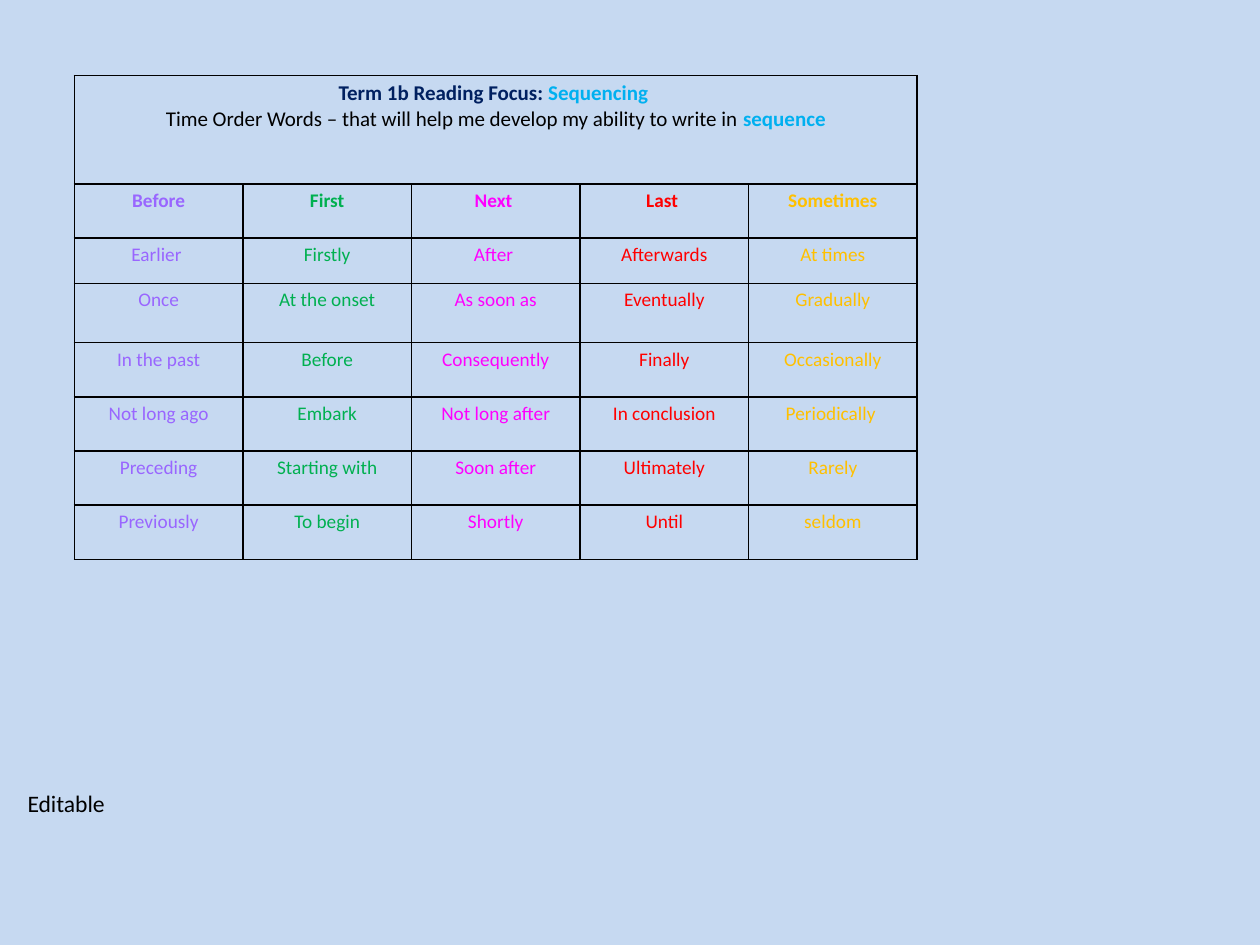
from lxml.etree import SubElement as Sub
from pptx import Presentation
from pptx.dml.color import RGBColor as RGB
from pptx.enum.text import MSO_AUTO_SIZE as Auto, PP_ALIGN as Align
from pptx.oxml.ns import qn
from pptx.util import Inches, Pt

# Content
COLORS = {
    "back": "C6D9F1", "ink": "000000", "navy": "002060", "sky": "00B0F0",
    "violet": "9966FF", "green": "00B050", "pink": "FF00FF",
    "red": "FF0000", "gold": "FFC000",
}
TITLE = [
    [("Term 1b Reading Focus: ", "navy", True), ("Sequencing ", "sky", True)],
    [("Time Order Words – that will help me develop my ability to write in ",
      "ink", False), ("sequence", "sky", True)],
]
WORDS = [
    ("violet", ["Before", "Earlier ", "Once", "In the past",
                "Not long ago", "Preceding", "Previously"]),
    ("green", ["First", "Firstly", "At the onset", "Before",
               "Embark", "Starting with", "To begin"]),
    ("pink", ["Next ", "After ", "As soon as", "Consequently",
              "Not long after", "Soon after", "Shortly"]),
    ("red", ["Last ", "Afterwards", "Eventually", "Finally",
             "In conclusion", "Ultimately", "Until"]),
    ("gold", ["Sometimes", "At times", "Gradually", "Occasionally",
              "Periodically ", "Rarely", "seldom"]),
]
LABEL = [[("Editable", "ink", False)]]

# Layout
LEFT, TOP, WIDTH = 0.59, 0.6, 6.69
ROWS = [0.86, 0.43, 0.36, 0.47, 0.43, 0.43, 0.43, 0.43]
INSETS = {"margin_left": 0.07, "margin_right": 0.07,
          "margin_top": 0.04, "margin_bottom": 0.04}


def write(frame, lines, size, align):
    for i, line in enumerate(lines):
        para = frame.add_paragraph() if i else frame.paragraphs[0]
        para.alignment = align
        for text, color, bold in line:
            run = para.add_run()
            run.text = text
            form = {"name": "Calibri", "size": Pt(size), "bold": bold}
            for key, value in form.items():
                setattr(run.font, key, value)
            run.font.color.rgb = RGB.from_string(COLORS[color])


def frame_cell(cell):
    props = cell._tc.get_or_add_tcPr()
    for side in "LRTB":
        line = Sub(props, qn("a:ln" + side), w=str(Pt(1)))
        fill = Sub(line, qn("a:solidFill"))
        Sub(fill, qn("a:srgbClr"), val=COLORS["ink"])
    cell.fill.background()
    for key, value in INSETS.items():
        setattr(cell, key, Inches(value))


# Slide
deck = Presentation()
deck.slide_width, deck.slide_height = Inches(10), Inches(7.5)
slide = deck.slides.add_slide(deck.slide_layouts[6])
slide.background.fill.solid()
slide.background.fill.fore_color.rgb = RGB.from_string(COLORS["back"])

# Word table
table = slide.shapes.add_table(
    len(ROWS), len(WORDS), Inches(LEFT), Inches(TOP),
    Inches(WIDTH), Inches(sum(ROWS))).table
table.first_row = table.horz_banding = False
for row, height in zip(table.rows, ROWS):
    row.height = Inches(height)
for cell in table.iter_cells():
    frame_cell(cell)

head = table.cell(0, 0)
head.merge(table.cell(0, len(WORDS) - 1))
write(head.text_frame, TITLE, 12, Align.CENTER)
for c, (color, words) in enumerate(WORDS):
    for r, word in enumerate(words, 1):
        write(table.cell(r, c).text_frame, [[(word, color, r == 1)]],
              11, Align.CENTER)

# Label
box = slide.shapes.add_textbox(Inches(0.12), Inches(6.21),
                               Inches(1.52), Inches(0.33))
box.text_frame.word_wrap = True
box.text_frame.auto_size = Auto.SHAPE_TO_FIT_TEXT
write(box.text_frame, LABEL, 13.5, Align.LEFT)

deck.save("out.pptx")
